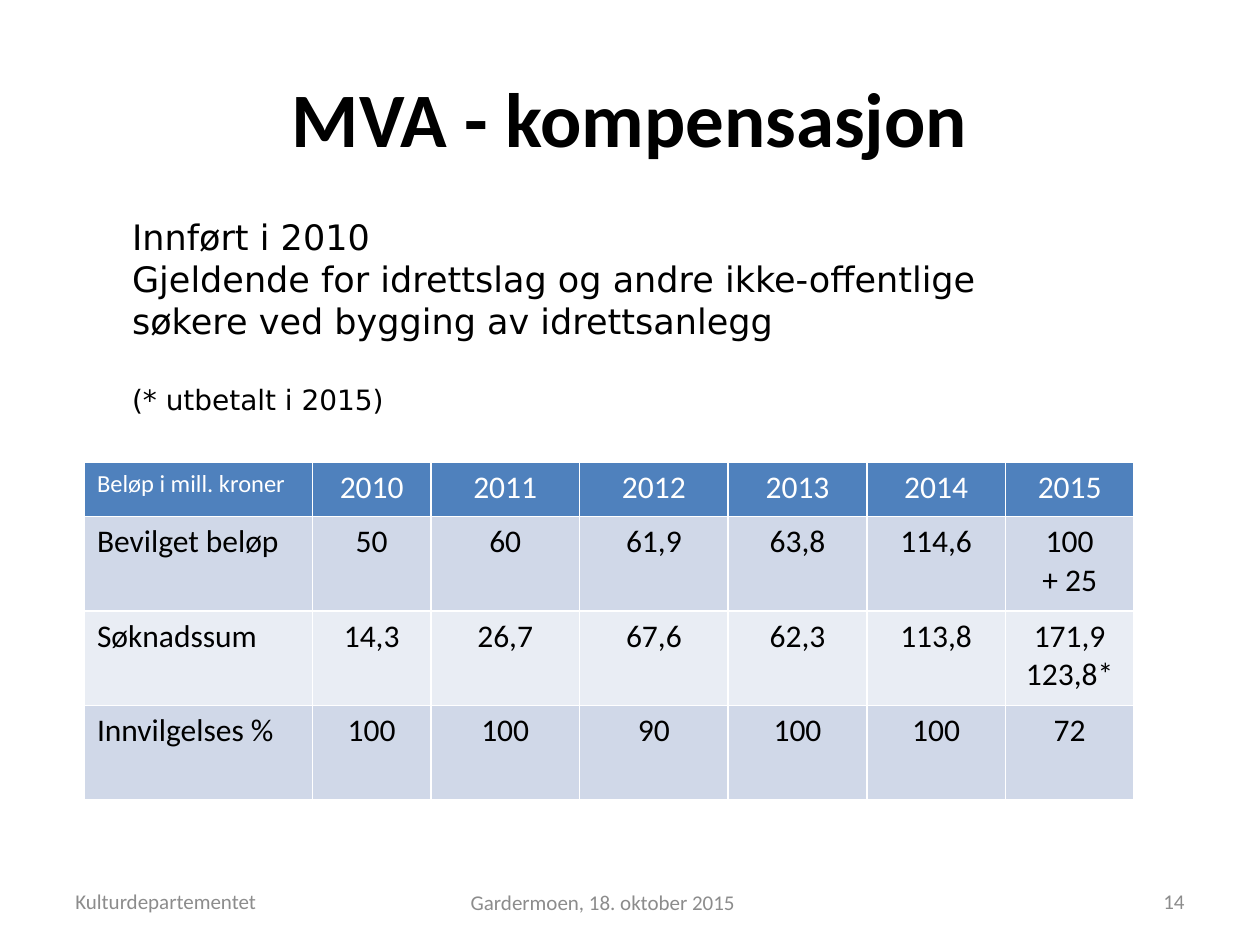
from lxml import etree
from pptx import Presentation
from pptx.dml.color import RGBColor
from pptx.enum import text
from pptx.oxml import ns
from pptx.util import Inches, Pt

LEFT, CENTER, RIGHT = text.PP_ALIGN.LEFT, text.PP_ALIGN.CENTER, text.PP_ALIGN.RIGHT
BLACK, WHITE, GREY = "000000", "FFFFFF", "8C8C8C"
HEADER_FILL = "4F81BD"
BAND_FILLS = ["D0D8E8", "E9EDF4"]
COLUMN_WIDTHS = [1.81, 0.94, 1.18, 1.18, 1.1, 1.1, 1.02]
ROW_HEIGHTS = [0.43, 0.75, 0.75, 0.75]
ROWS = [
    ["Beløp i mill. kroner", "2010", "2011", "2012", "2013", "2014", "2015"],
    ["Bevilget beløp", "50", "60", "61,9", "63,8", "114,6", "100\n+ 25"],
    ["Søknadssum", "14,3", "26,7", "67,6", "62,3", "113,8", "171,9\n123,8*"],
    ["Innvilgelses %", "100", "100", "90", "100", "100", "72"],
]


def color(value):
    return RGBColor.from_string(value)


def format_text(text_frame, size, fill, align=LEFT, name="Calibri", bold=False):
    for paragraph in text_frame.paragraphs:
        paragraph.alignment = align
        for run in paragraph.runs:
            run.font.size = Pt(size)
            run.font.name = name
            run.font.bold = bold
            run.font.color.rgb = color(fill)


def add_text(slide, box, content, size, fill, align=LEFT,
             anchor=text.MSO_ANCHOR.MIDDLE, name="Calibri", bold=False):
    text_frame = slide.shapes.add_textbox(*map(Inches, box)).text_frame
    text_frame.word_wrap = True
    text_frame.vertical_anchor = anchor
    text_frame.text = content
    format_text(text_frame, size, fill, align, name, bold)
    return text_frame


def add_introduction(slide, box):
    content = "\n".join([
        "Innført i 2010",
        "Gjeldende for idrettslag og andre ikke-offentlige",
        "søkere ved bygging av idrettsanlegg",
        "(* utbetalt i 2015)",
    ])
    text_frame = add_text(slide, box, content, 20, BLACK,
                          anchor=text.MSO_ANCHOR.BOTTOM, name="DejaVu Sans")
    footnote = text_frame.paragraphs[-1]
    footnote.space_before = Pt(23.5)
    footnote.runs[0].font.size = Pt(16)


def set_borders(cell, fill, width):
    properties = cell._tc.get_or_add_tcPr()
    for index, side in enumerate(["a:lnL", "a:lnR", "a:lnT", "a:lnB"]):
        line = etree.Element(ns.qn(side), w=str(Pt(width)))
        solid = etree.SubElement(line, ns.qn("a:solidFill"))
        etree.SubElement(solid, ns.qn("a:srgbClr"), val=fill)
        properties.insert(index, line)


def add_grant_table(slide, box):
    table = slide.shapes.add_table(
        len(ROWS), len(COLUMN_WIDTHS), *map(Inches, box)).table
    for column, width in zip(table.columns, COLUMN_WIDTHS):
        column.width = Inches(width)
    for row, height in zip(table.rows, ROW_HEIGHTS):
        row.height = Inches(height)
    for row_index, values in enumerate(ROWS):
        is_header = row_index == 0
        for column_index, value in enumerate(values):
            cell = table.cell(row_index, column_index)
            cell.text_frame.text = value
            cell.fill.solid()
            cell.fill.fore_color.rgb = color(
                HEADER_FILL if is_header else BAND_FILLS[(row_index - 1) % 2])
            format_text(
                cell.text_frame,
                14 if is_header and column_index == 0 else 18,
                WHITE if is_header else BLACK,
                CENTER if column_index else LEFT)
            set_borders(cell, WHITE, 1)


def add_footer(slide, box):
    left, top, width, height = box
    side_width = 2.33
    add_text(slide, (left, top, side_width, height), "Kulturdepartementet", 12, GREY)
    add_text(slide, (2.72, top, 4.13, 0.42), "Gardermoen, 18. oktober 2015",
             12, GREY, CENTER)
    add_text(slide, (left + width - side_width, top, side_width, height),
             "14", 12, GREY, RIGHT)


def main():
    presentation = Presentation()
    presentation.slide_width = Inches(10)
    presentation.slide_height = Inches(7.5)
    slide = presentation.slides.add_slide(presentation.slide_layouts[6])
    add_text(slide, (0.5, 0.3, 9, 1.25), "MVA - kompensasjon", 44, BLACK, CENTER, bold=True)
    add_introduction(slide, (0.95, 1.62, 8.35, 1.73))
    add_grant_table(slide, (0.67, 3.67, 8.35, 2.68))
    add_footer(slide, (0.5, 6.95, 9, 0.4))
    presentation.save("out.pptx")


if __name__ == "__main__":
    main()
